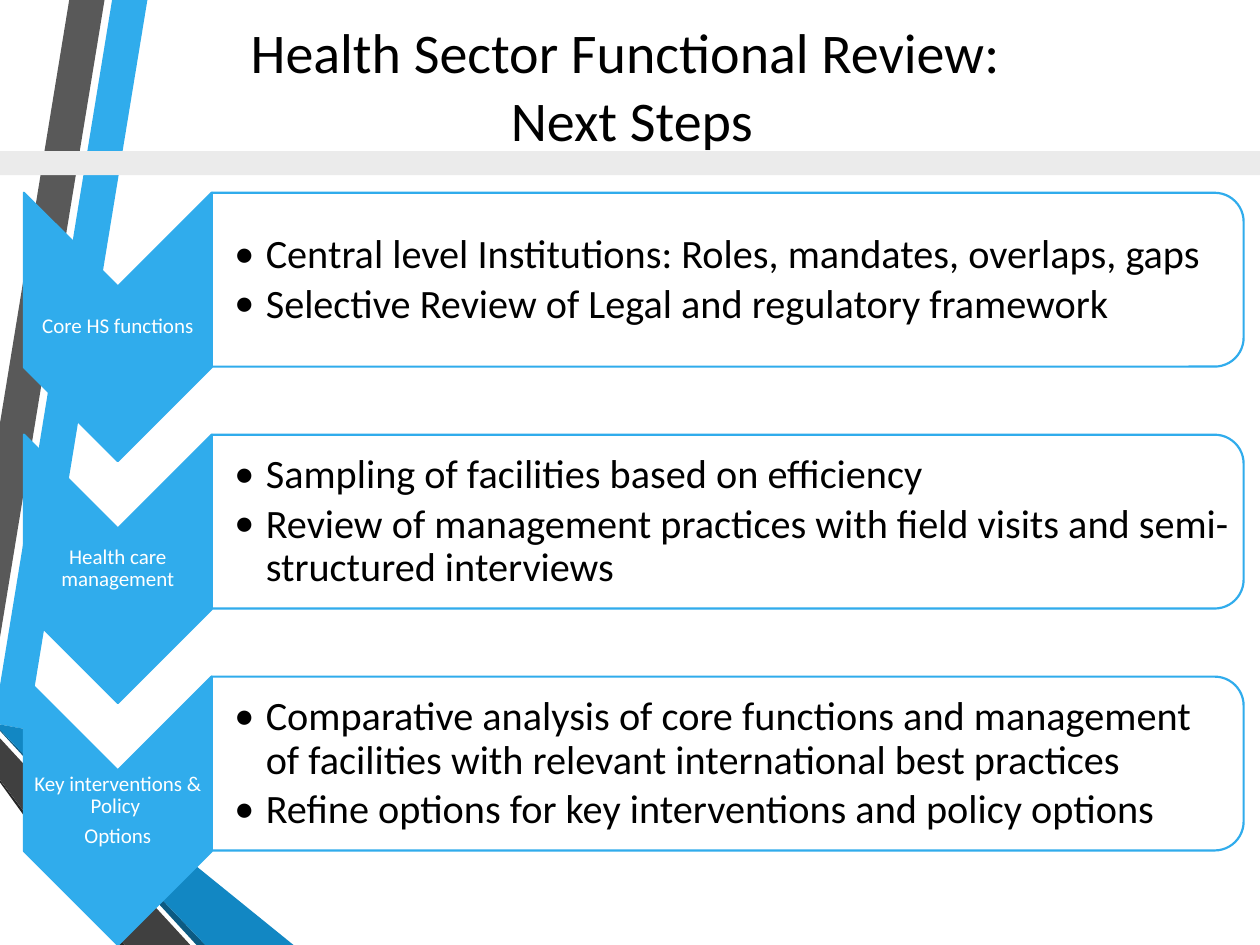
from copy import deepcopy

from lxml import etree
from pptx import Presentation
from pptx.dml.color import RGBColor
from pptx.enum.shapes import MSO_SHAPE
from pptx.enum.text import MSO_ANCHOR, MSO_AUTO_SIZE, PP_ALIGN
from pptx.oxml.ns import qn
from pptx.util import Pt

PX = 9144  # 100 px to the inch
WIDTH, HEIGHT = 1000, 750
FONT = "Calibri"
RECT, CHEVRON = MSO_SHAPE.RECTANGLE, MSO_SHAPE.CHEVRON
PANEL = MSO_SHAPE.ROUND_2_SAME_RECTANGLE
LEFT, CENTER = PP_ALIGN.LEFT, PP_ALIGN.CENTER
MIDDLE, BOTTOM = MSO_ANCHOR.MIDDLE, MSO_ANCHOR.BOTTOM
NO_FIT = MSO_AUTO_SIZE.NONE

COLORS = {
    "sky": "30ACEC", "blue": "1287C3", "navy": "0C5A82",
    "gray": "595959", "dark": "404040", "coal": "262626",
    "band": "EBEBEB", "white": "FFFFFF", "black": "000000",
}

RIBBONS = [
    ("sky", [(0, 544), (0, 575), (22, 579), (117, 0), (89, 0)]),
    ("gray", [(83, 0), (55, 0), (0, 336), (0, 506)]),
    ("coal", [(0, 619), (0, 621), (93, 750), (99, 750)]),
    ("navy", [(0, 579), (0, 580), (156, 750), (163, 750)]),
    ("blue", [(0, 579), (163, 750), (233, 750), (22, 579), (0, 575)]),
    ("dark", [(0, 619), (99, 750), (151, 750), (0, 586)]),
]

STEPS = [
    (["Core HS functions"],
     ["Central level Institutions: Roles, mandates, overlaps, gaps",
      "Selective Review of Legal and regulatory framework"]),
    (["Health care management"],
     ["Sampling of facilities based on efficiency",
      "Review of management practices with field visits and "
      "semi-structured interviews"]),
    (["Key interventions & Policy ", "Options"],
     ["Comparative analysis of core functions and management of "
      "facilities with relevant international best practices",
      "Refine options for key interventions and policy options"]),
]


def rgb(name):
    return RGBColor.from_string(COLORS[name])


def px(*sizes):
    return [round(size * PX) for size in sizes]


def paint(shape, fill, line=None):
    shape.shadow.inherit = False
    shape.fill.solid()
    shape.fill.fore_color.rgb = rgb(fill)
    if line:
        shape.line.color.rgb = rgb(line)
        shape.line.width = Pt(1.25)
    else:
        shape.line.fill.background()
    return shape


def turned(slide, kind, box, **look):
    """Add a shape turned by 90 degrees that fills the box as seen."""
    x, y, w, h = box
    frame = px(x + (w - h) / 2, y + (h - w) / 2, h, w)
    shape = slide.shapes.add_shape(kind, *frame)
    shape.rotation = 90
    return paint(shape, **look)


def add_bullet(para):
    props = para._p.get_or_add_pPr()
    props.set("marL", str(25 * PX))
    props.set("indent", str(-25 * PX))
    etree.SubElement(props, qn("a:buFont"), typeface=FONT)
    etree.SubElement(props, qn("a:buChar"), char="•")


def write(shape, lines, size, color, align=CENTER, anchor=MIDDLE,
          inset=None, leading=None, gap=0, bullet=False):
    """Fill a shape with paragraphs; gap is a share of the text size."""
    frame = shape.text_frame
    frame.word_wrap = True
    frame.auto_size = NO_FIT
    frame.vertical_anchor = anchor
    if inset:
        (frame.margin_left, frame.margin_top,
         frame.margin_right, frame.margin_bottom) = px(*inset)
    for i, line in enumerate(lines):
        para = frame.add_paragraph() if i else frame.paragraphs[0]
        para.text = line
        para.alignment = align
        para.line_spacing = leading
        para.space_after = Pt(size * gap)
        if bullet:
            add_bullet(para)
        for run in para.runs:
            run.font.name = FONT
            run.font.size = Pt(size)
            run.font.color.rgb = rgb(color)
        for brk in para._p.findall(qn("a:br")):
            brk.insert(0, deepcopy(para.runs[0]._r.rPr))


def draw_backdrop(slide, box):
    x, y, w, h = box
    for color, points in RIBBONS:
        spots = [(x + a, y + b) for a, b in points]
        path = slide.shapes.build_freeform(*spots[0], scale=PX)
        path.add_line_segments(spots[1:], close=True)
        paint(path.convert_to_shape(), color)
    band = slide.shapes.add_shape(RECT, *px(x, y + 120, w, 19))
    paint(band, "band")


def draw_title(slide, box):
    title = slide.shapes.title
    title.left, title.top, title.width, title.height = px(*box)
    write(title, ["Health Sector Functional Review: \vNext Steps"],
          size=32, color="black", anchor=BOTTOM)
    slide.shapes._spTree.append(title._element)  # in front of the backdrop


def draw_step(slide, box, label, points):
    x, y, w, h = box
    arm, deep = 149, 138
    turned(slide, CHEVRON, (x, y, arm, h), fill="sky", line="sky")
    name = slide.shapes.add_textbox(*px(x, y + arm / 2, arm, h - arm))
    write(name, label, size=12, color="white", inset=(1, 1, 1, 1),
          leading=0.9, gap=0.35)

    panel = turned(slide, PANEL, (x + arm, y, w - arm, deep),
                   fill="white", line="sky")
    tint = panel.fill._xPr.find(".//" + qn("a:srgbClr"))
    etree.SubElement(tint, qn("a:alpha"), val="90000")
    body = slide.shapes.add_textbox(
        *px(x + arm, y + 7, w - arm - 6, deep - 13))
    write(body, points, size=23, color="black", align=LEFT,
          inset=(18, 2, 2, 2), leading=0.9, gap=0.15, bullet=True)


def main():
    deck = Presentation()
    deck.slide_width, deck.slide_height = px(WIDTH, HEIGHT)
    slide = deck.slides.add_slide(deck.slide_layouts[5])
    draw_backdrop(slide, (0, 0, WIDTH, HEIGHT))
    draw_title(slide, (39, 33, 925, 93))
    for i, (label, points) in enumerate(STEPS):
        draw_step(slide, (19, 153 + 192 * i, 968, 213), label, points)
    deck.save("out.pptx")


if __name__ == "__main__":
    main()
